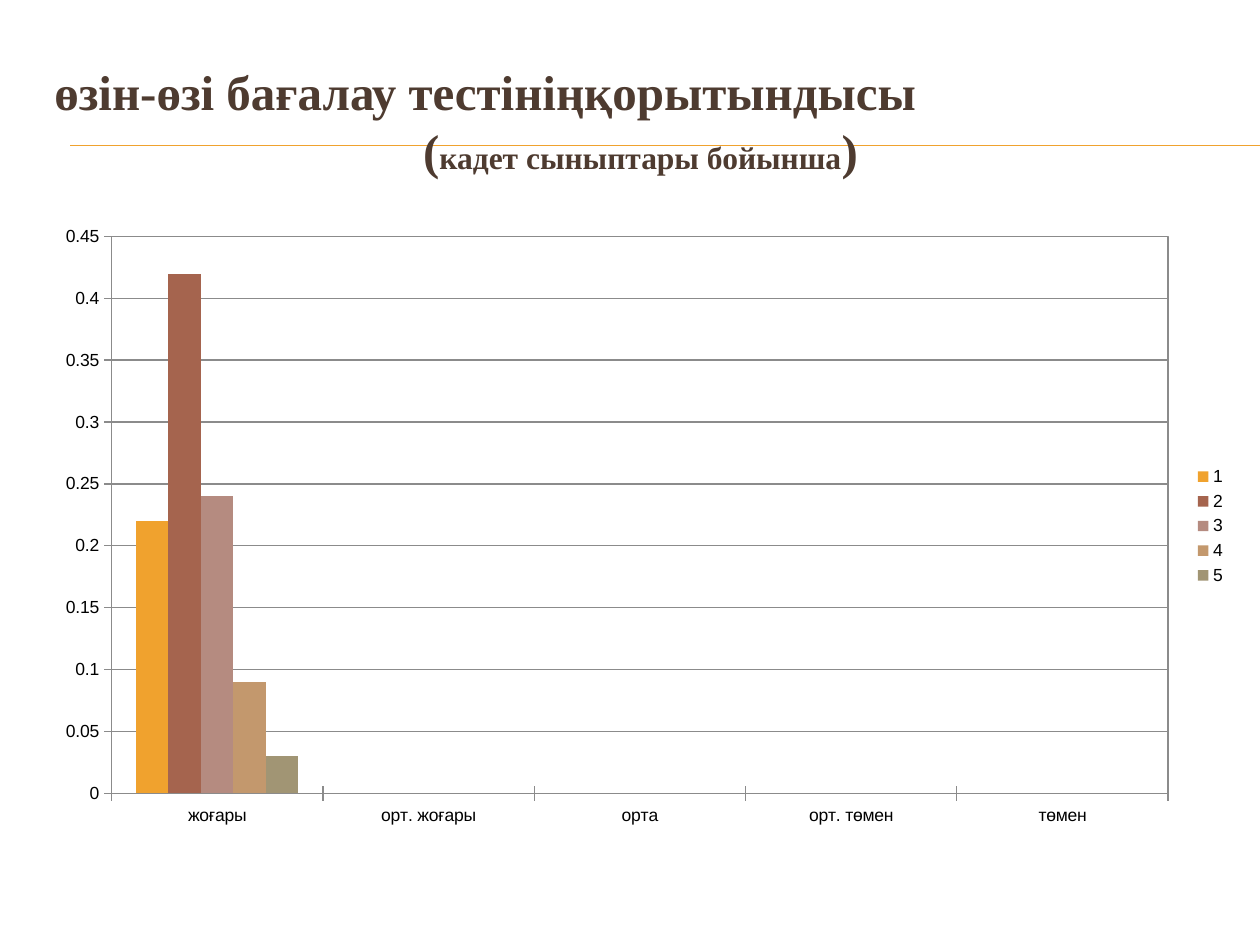
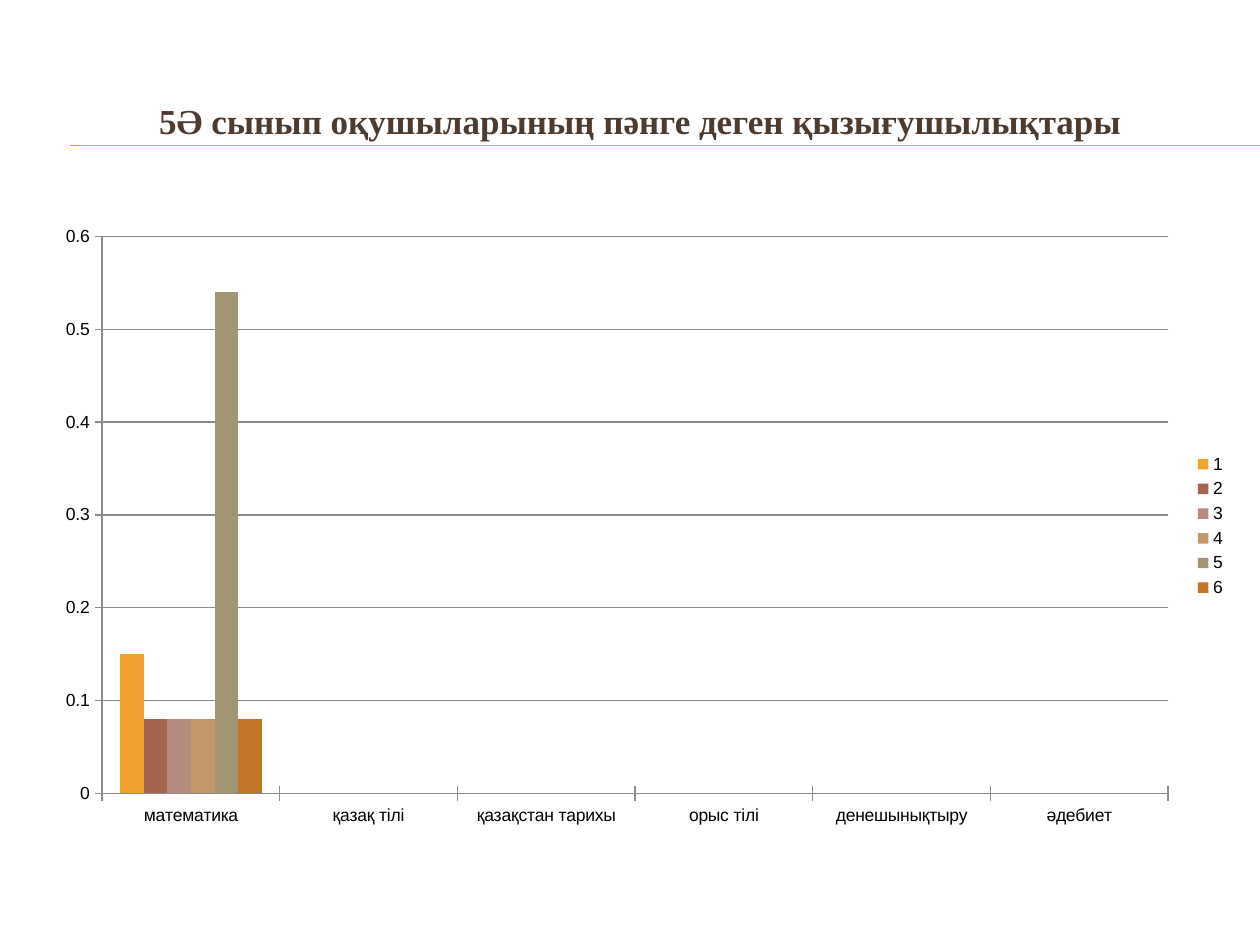
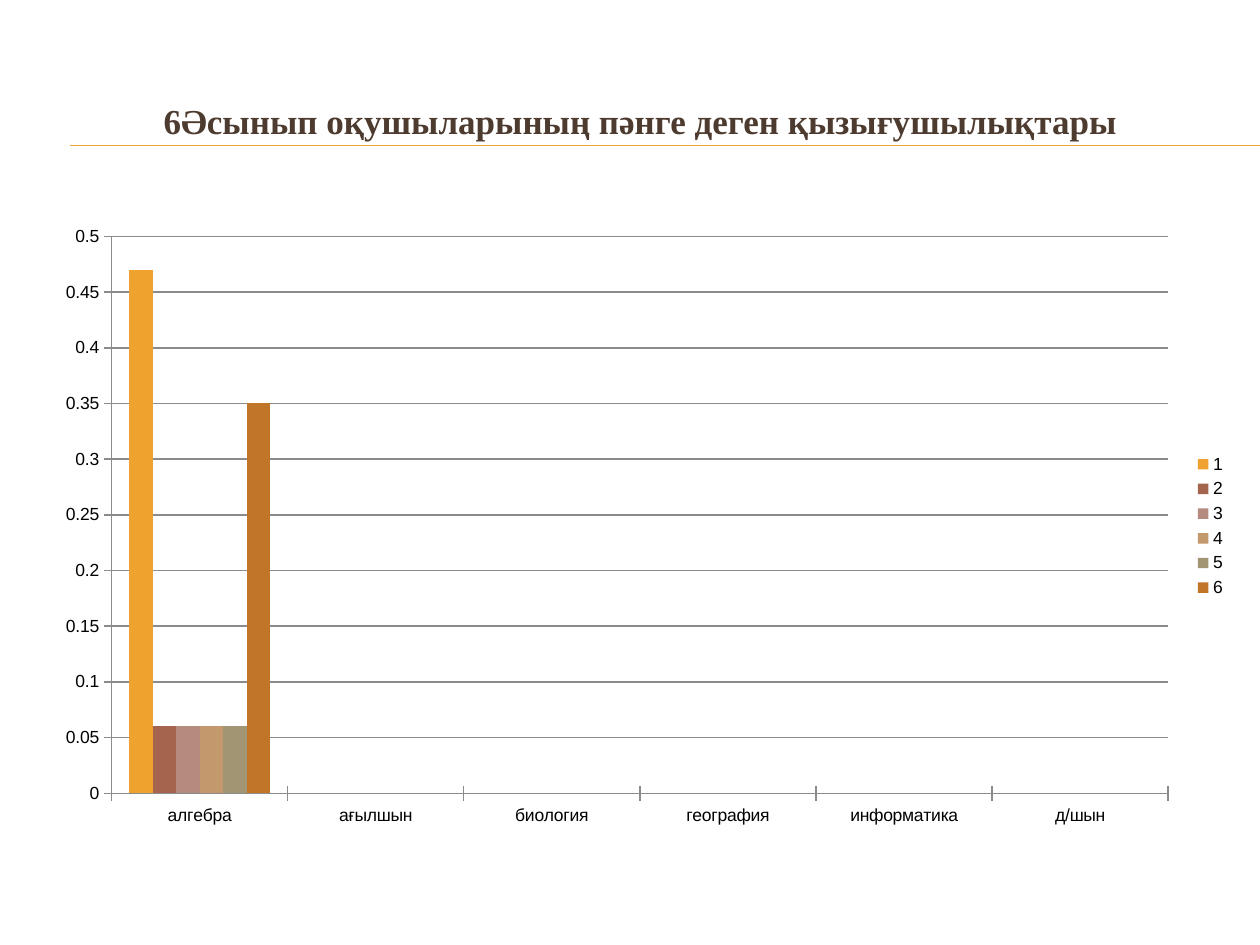
from dataclasses import dataclass

from lxml.etree import SubElement as SubEl
from pptx import Presentation
from pptx.chart.data import CategoryChartData as ChartData
from pptx.dml.color import RGBColor as Rgb
from pptx.enum.chart import XL_CHART_TYPE as Kind
from pptx.enum.chart import XL_LEGEND_POSITION as Side
from pptx.enum.chart import XL_TICK_MARK as Tick
from pptx.enum.shapes import MSO_CONNECTOR as Link
from pptx.enum.text import MSO_ANCHOR as Anchor
from pptx.enum.text import PP_ALIGN as Align
from pptx.oxml.ns import qn
from pptx.util import Inches, Pt

WIDE, HIGH = Inches(10), Inches(7.5)
COLS, ROWS = 120, 90


@dataclass(frozen=True)
class Theme:
    head: str = "4E3B30"
    rule: str = "F0A22E"
    axis: str = "8B8B8B"
    ink: str = "000000"
    paper: str = "FFFFFF"
    bars: tuple[str, ...] = ("F0A22E", "A5644E", "B58B80",
                             "C3986D", "A19574", "C17529")
    serif: str = "Times New Roman"
    sans: str = "Arial"
    big: int = 28
    mid: int = 20
    small: int = 18
    label: int = 10
    rule_w: float = 0.75
    axis_w: float = 0.79


@dataclass(frozen=True)
class Area:
    """A box in grid columns and rows."""
    col: float
    row: float
    cols: float
    rows: float

    def box(self) -> tuple[int, int, int, int]:
        return (across(self.col), down(self.row),
                across(self.cols), down(self.rows))


@dataclass(frozen=True)
class Run:
    text: str
    size: int


@dataclass(frozen=True)
class Line:
    runs: tuple[Run, ...]
    align: Align = Align.CENTER


@dataclass(frozen=True)
class Page:
    title: tuple[Line, ...]
    cats: tuple[str, ...]
    vals: tuple[float, ...]
    framed: bool = False


def across(cols: float) -> int:
    return round(WIDE * cols / COLS)


def down(rows: float) -> int:
    return round(HIGH * rows / ROWS)


LOOK = Theme()
TITLE = Area(4, 6, 114, 11)
PLOT = Area(4, 20.4, 114, 59.4)
RULE_COL, RULE_ROW = 6.7, 13.86

PAGES = (
    Page((Line((Run("өзін-өзі бағалау тестініңқорытындысы", LOOK.big),),
               Align.LEFT),
          Line((Run("(", LOOK.big),
                Run("кадет сыныптары бойынша", LOOK.small),
                Run(")", LOOK.big)))),
         ("жоғары", "орт. жоғары", "орта", "орт. төмен", "төмен"),
         (0.22, 0.42, 0.24, 0.09, 0.03), framed=True),
    Page((Line((Run("5Ә сынып оқушыларының пәнге деген қызығушылықтары",
                    LOOK.mid),)),),
         ("математика", "қазақ тілі", "қазақстан тарихы", "орыс тілі",
          "денешынықтыру", "әдебиет"),
         (0.15, 0.08, 0.08, 0.08, 0.54, 0.08)),
    Page((Line((Run("6Әсынып оқушыларының пәнге деген қызығушылықтары",
                    LOOK.mid),)),),
         ("алгебра", "ағылшын", "биология", "география",
          "информатика", "д/шын"),
         (0.47, 0.06, 0.06, 0.06, 0.06, 0.35)),
)


def stroke(line, tint: str, width: float) -> None:
    line.color.rgb = Rgb.from_string(tint)
    line.width = Pt(width)


def draw_rule(slide) -> None:
    y = down(RULE_ROW)
    rule = slide.shapes.add_connector(Link.STRAIGHT, across(RULE_COL), y,
                                      WIDE, y)
    stroke(rule.line, LOOK.rule, LOOK.rule_w)
    SubEl(rule._element.spPr, qn("a:effectLst"))


def draw_title(slide, lines: tuple[Line, ...]) -> None:
    frame = slide.shapes.add_textbox(*TITLE.box()).text_frame
    frame.word_wrap = True
    frame.vertical_anchor = Anchor.MIDDLE
    for i, line in enumerate(lines):
        para = frame.add_paragraph() if i else frame.paragraphs[0]
        para.alignment = line.align
        for part in line.runs:
            run = para.add_run()
            run.text = part.text
            run.font.name = LOOK.serif
            run.font.size = Pt(part.size)
            run.font.bold = True
            run.font.color.rgb = Rgb.from_string(LOOK.head)


def paint_plot(chart, framed: bool) -> None:
    """Give the plot area an outline or a plain fill."""
    area = chart._chartSpace.chart.plotArea
    props = SubEl(area, qn("c:spPr"))
    if framed:
        SubEl(props, qn("a:noFill"))
        host = SubEl(props, qn("a:ln"), w=str(Pt(LOOK.axis_w)))
        tint = LOOK.axis
    else:
        host, tint = props, LOOK.paper
    fill = SubEl(host, qn("a:solidFill"))
    SubEl(fill, qn("a:srgbClr"), val=tint)
    if not framed:
        SubEl(SubEl(props, qn("a:ln")), qn("a:noFill"))


def draw_chart(slide, page: Page) -> None:
    # Each series holds one value, under the first category
    data = ChartData()
    data.categories = page.cats
    rest = [None] * (len(page.cats) - 1)
    for i, val in enumerate(page.vals, 1):
        data.add_series(str(i), [val, *rest])
    chart = slide.shapes.add_chart(Kind.COLUMN_CLUSTERED, *PLOT.box(),
                                   data).chart
    chart.has_title = False
    chart.font.name = LOOK.sans
    chart.font.size = Pt(LOOK.label)
    chart.font.color.rgb = Rgb.from_string(LOOK.ink)

    # Legend and bars
    chart.has_legend = True
    chart.legend.position = Side.RIGHT
    chart.legend.include_in_layout = False
    plot = chart.plots[0]
    plot.vary_by_categories = False
    plot.gap_width = 150
    for bar, tint in zip(plot.series, LOOK.bars):
        bar.format.fill.solid()
        bar.format.fill.fore_color.rgb = Rgb.from_string(tint)

    # Axes and grid
    for axis in (chart.category_axis, chart.value_axis):
        axis.major_tick_mark = Tick.CROSS
        stroke(axis.format.line, LOOK.axis, LOOK.axis_w)
    grid = chart.value_axis.major_gridlines
    stroke(grid.format.line, LOOK.axis, LOOK.axis_w)
    paint_plot(chart, page.framed)


def main() -> None:
    deck = Presentation()
    deck.slide_width, deck.slide_height = WIDE, HIGH
    blank = deck.slide_layouts[6]
    for page in PAGES:
        slide = deck.slides.add_slide(blank)
        draw_rule(slide)
        draw_title(slide, page.title)
        draw_chart(slide, page)
    deck.save("out.pptx")


if __name__ == "__main__":
    main()
